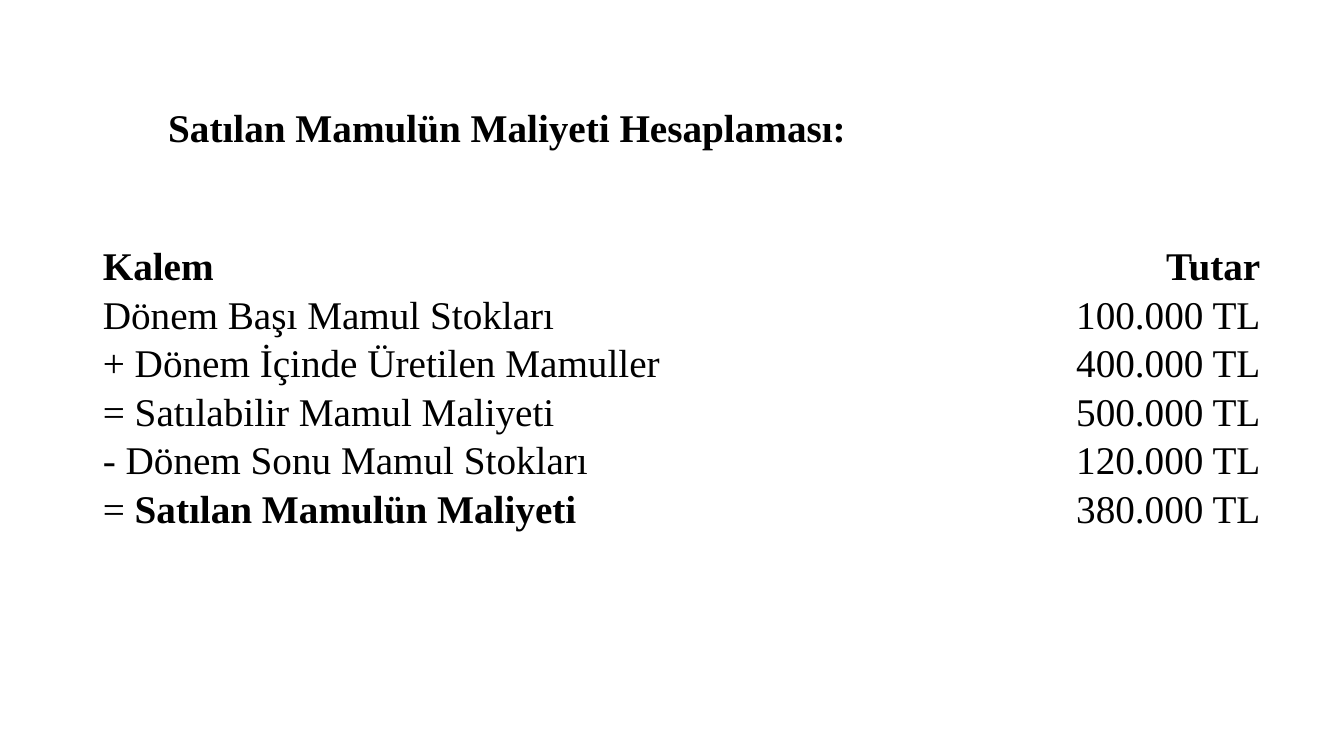
import pptx
import pptx.dml.color
import pptx.enum.text
import pptx.util

ALIGN = pptx.enum.text.PP_ALIGN


def color(value):
    return pptx.dml.color.RGBColor.from_string(value)


class Deck:
    """Hold the text style and current slide, placing elements on a 100 by 100 grid."""

    font = "Times New Roman"
    size = pptx.util.Pt(28)
    ink = "000000"
    paper = "FFFFFF"

    def __init__(self):
        self.prs = pptx.Presentation()
        self.prs.slide_width = pptx.util.Inches(13.33)
        self.prs.slide_height = pptx.util.Inches(7.5)
        self.s = self.prs.slides.add_slide(self.prs.slide_layouts[6])
        self.s.background.fill.solid()
        self.s.background.fill.fore_color.rgb = color(self.paper)

    def x(self, columns):
        return int(self.prs.slide_width * columns / 100)

    def y(self, rows):
        return int(self.prs.slide_height * rows / 100)

    def add_runs(self, p, runs, align=ALIGN.LEFT, spacing=1.0):
        p.alignment = align
        p.line_spacing = spacing
        for text, bold in runs:
            r = p.add_run()
            r.text = text
            r.font.name = self.font
            r.font.size = self.size
            r.font.bold = bold
            r.font.color.rgb = color(self.ink)

    def text(self, left, top, width, height, runs):
        sp = self.s.shapes.add_textbox(self.x(left), self.y(top), self.x(width), self.y(height))
        tf = sp.text_frame
        tf.word_wrap = True
        tf.auto_size = pptx.enum.text.MSO_AUTO_SIZE.SHAPE_TO_FIT_TEXT
        self.add_runs(tf.paragraphs[0], runs)

    def table(self, left, top, widths, row_height, rows, aligns):
        table = self.s.shapes.add_table(
            len(rows), len(widths), self.x(left), self.y(top),
            self.x(sum(widths)), self.y(row_height * len(rows))).table
        table.first_row = table.horz_banding = False
        for column, width in zip(table.columns, widths):
            column.width = self.x(width)
        inset = pptx.util.Inches(0.01)
        for row, contents in zip(table.rows, rows):
            row.height = self.y(row_height)
            for cell, runs, align in zip(row.cells, contents, aligns):
                cell.fill.background()
                cell.vertical_anchor = pptx.enum.text.MSO_ANCHOR.MIDDLE
                cell.margin_left = cell.margin_right = inset
                cell.margin_top = cell.margin_bottom = inset
                self.add_runs(cell.text_frame.paragraphs[0], runs, align, 1.07)


def main():
    deck = Deck()
    items = [
        ([("Kalem", True)], [("Tutar", True)]),
        ([("Dönem Başı Mamul Stokları", False)], [("100.000 TL", False)]),
        ([("+ Dönem İçinde Üretilen Mamuller", False)], [("400.000 TL", False)]),
        ([("= Satılabilir Mamul Maliyeti", False)], [("500.000 TL", False)]),
        ([("- Dönem Sonu Mamul Stokları", False)], [("120.000 TL", False)]),
        ([("= ", False), ("Satılan Mamulün Maliyeti", True)], [("380.000 TL", False)]),
    ]
    deck.table(7.58, 32, [72.09, 14.18], 6.4, items, [ALIGN.JUSTIFY, ALIGN.RIGHT])
    deck.text(11.78, 13.07, 77.27, 7.6, [("Satılan Mamulün Maliyeti Hesaplaması:", True)])
    deck.prs.save("out.pptx")


if __name__ == "__main__":
    main()
